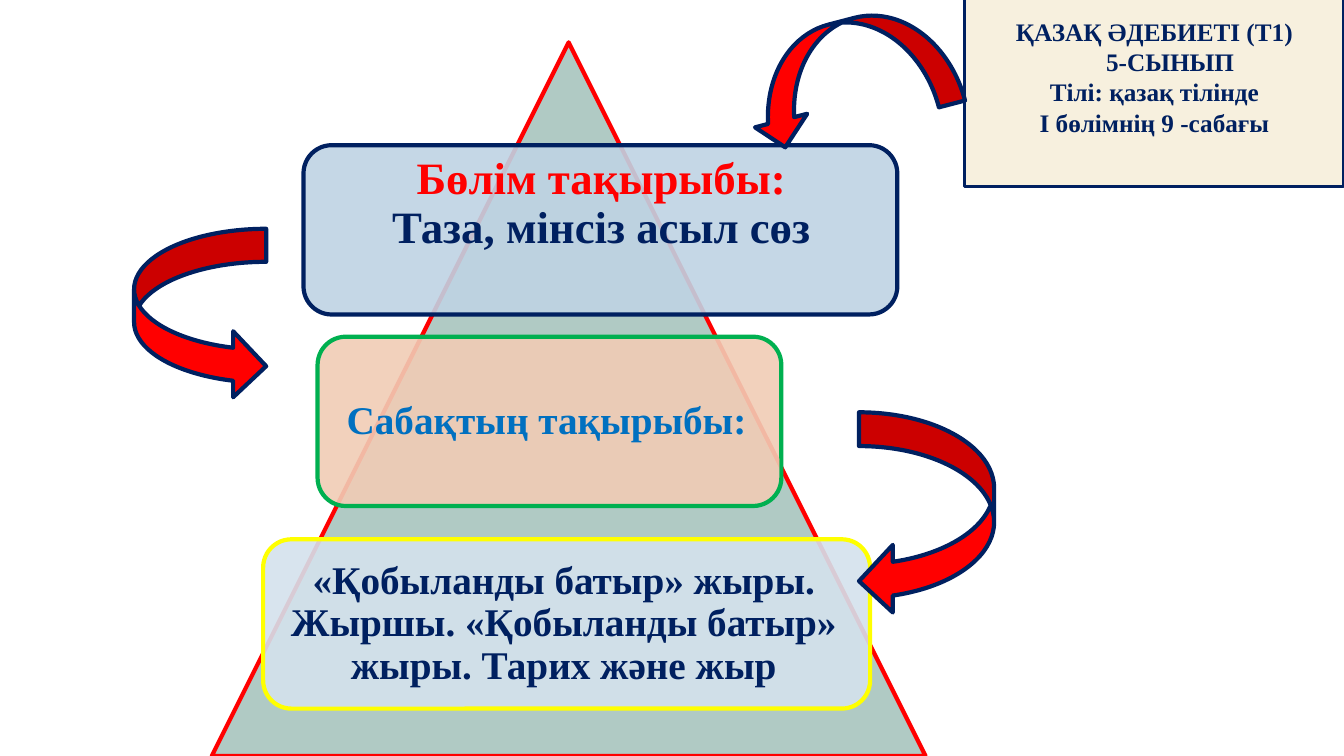
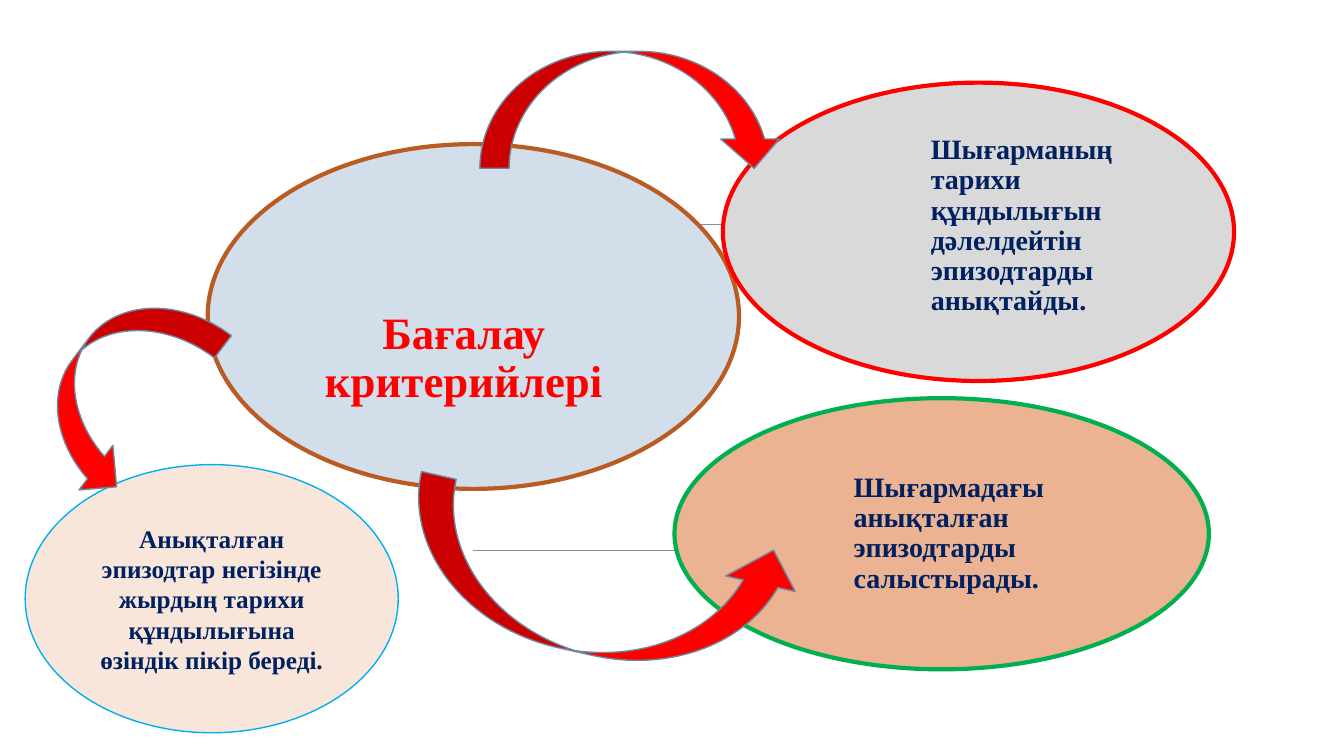
from lxml import etree
from pptx import Presentation
from pptx.dml.color import RGBColor
from pptx.enum import shapes, text
from pptx.oxml import ns
from pptx.util import Inches, Pt

NAVY = RGBColor(0x00, 0x20, 0x60)
RED = RGBColor(0xFF, 0x00, 0x00)
GREEN = RGBColor(0x00, 0xB0, 0x50)
BLUE = RGBColor(0x00, 0x70, 0xC0)
SKY = RGBColor(0x00, 0xB0, 0xF0)
YELLOW = RGBColor(0xFF, 0xFF, 0x00)
BROWN = RGBColor(0xB9, 0x5B, 0x22)
STEEL = RGBColor(0x6D, 0x87, 0x9B)
SLATE = RGBColor(0x77, 0x92, 0xA8)
CREAM = RGBColor(0xF7, 0xF0, 0xDE)
SAGE = RGBColor(0xB0, 0xCA, 0xC4)
PALE_BLUE = RGBColor(0xBF, 0xD3, 0xE4)
PEACH = RGBColor(0xF1, 0xCC, 0xB5)
ICE = RGBColor(0xD4, 0xE2, 0xED)
MIST = RGBColor(0xD2, 0xDE, 0xEA)
GREY = RGBColor(0xD9, 0xD9, 0xD9)
ORANGE = RGBColor(0xEB, 0xB3, 0x91)
BLUSH = RGBColor(0xF8, 0xE6, 0xDA)

FONT = "Times New Roman"
KIND = shapes.MSO_SHAPE
ANCHOR = text.MSO_ANCHOR
ALIGN = text.PP_ALIGN


def draw(page, kind, place, fill, line, weight, opacity=100):
    """Add a filled, outlined preset shape; place is left, top, width, height."""
    shape = page.shapes.add_shape(kind, *map(Inches, place))
    shape.shadow.inherit = False
    shape.fill.solid()
    shape.fill.fore_color.rgb = fill
    shape.line.color.rgb = line
    shape.line.width = Pt(weight)
    if opacity < 100:
        color = shape._element.spPr.find(ns.qn("a:solidFill"))[0]
        etree.SubElement(color, ns.qn("a:alpha"), val=str(opacity * 1000))
    return shape


def write(shape, lines, size, color, margins=(0.1, 0.05, 0.1, 0.05),
          anchor=ANCHOR.MIDDLE, align=ALIGN.CENTER, spacing=0.9):
    """Fill a shape with bold lines; margins are left, top, right, bottom."""
    frame = shape.text_frame
    frame.text = "\n".join(lines)
    frame.word_wrap = True
    frame.auto_size = text.MSO_AUTO_SIZE.NONE
    frame.vertical_anchor = anchor
    for side, margin in zip(("left", "top", "right", "bottom"), margins):
        setattr(frame, f"margin_{side}", Inches(margin))
    for para in frame.paragraphs:
        para.alignment = align
        para.line_spacing = spacing
        for span in para.runs:
            for name, value in {"name": FONT, "size": Pt(size), "bold": True}.items():
                setattr(span.font, name, value)
            span.font.color.rgb = color
    return frame


deck = Presentation()
deck.slide_width = Inches(13.33)
deck.slide_height = Inches(7.5)
title_only = deck.slide_layouts[5]

# Slide 1: lesson topic
page = deck.slides.add_slide(title_only)

# Subject card
card = draw(page, KIND.RECTANGLE, (9.57, -0.06, 3.76, 1.91), CREAM, NAVY, 2.25)
lines = ["ҚАЗАҚ ӘДЕБИЕТІ (Т1)", "5-СЫНЫП", "Тілі: қазақ тілінде", "І бөлімнің 9 -сабағы"]
frame = write(card, lines, 18, NAVY, margins=(0.1, 0.22, 0.1, 0.05),
              anchor=ANCHOR.TOP, spacing=1.0)
frame.paragraphs[1]._p.get_or_add_pPr().set("marL", str(Inches(0.31)))

# Pyramid with three bars
draw(page, KIND.ISOSCELES_TRIANGLE, (2.1, 0.42, 7.08, 7.08), SAGE, RED, 3)
bars = [
    (3.01, 1.44, 5.89, PALE_BLUE, NAVY, "", NAVY),
    (3.15, 3.34, 4.6, PEACH, GREEN, "Сабақтың тақырыбы:", BLUE),
    (2.61, 5.35, 6.02, ICE, YELLOW,
     "«Қобыланды батыр» жыры. Жыршы. «Қобыланды батыр» жыры. Тарих және жыр", NAVY),
]
for left, top, width, fill, line, words, color in bars:
    bar = draw(page, KIND.ROUNDED_RECTANGLE, (left, top, width, 1.68), fill, line, 3, 90)
    if words:
        write(bar, [words], 28, color, margins=(0.12, 0.12, 0.18, 0.12))

# Arrows between the steps
for kind, place, turn in [
    (KIND.CURVED_LEFT_ARROW, (8.52, 4.09, 1.34, 2.01), 0),
    (KIND.CURVED_RIGHT_ARROW, (1.33, 2.27, 1.31, 1.69), 0),
    (KIND.CURVED_UP_ARROW, (7.36, 0.21, 2.11, 1.07), 165.4),
]:
    draw(page, kind, place, RED, NAVY, 3).rotation = turn

# Slide 2: assessment criteria
criteria = deck.slides.add_slide(title_only)

# Rules behind the ovals
for y in (5.46, 2.23):
    rule = criteria.shapes.add_connector(
        shapes.MSO_CONNECTOR.STRAIGHT, Inches(4.69), Inches(y), Inches(9.32), Inches(y))
    rule.line.color.rgb = SLATE
    rule.line.width = Pt(1)
    etree.SubElement(rule._element.spPr, ns.qn("a:effectLst"))

# Ovals
draw(criteria, KIND.OVAL, (2.06, 1.43, 5.27, 3.42), MIST, BROWN, 3)
for place, fill, line, words, margins in [
    ((7.17, 0.82, 5.07, 2.96), GREY, RED,
     "Шығарманың тарихи құндылығын дәлелдейтін эпизодтарды анықтайды.",
     (1.32, 0, 0.29, 0.11)),
    ((6.69, 3.95, 5.3, 2.69), ORANGE, GREEN,
     "Шығармадағы анықталған эпизодтарды салыстырады.",
     (1, 0, 0.76, 0)),
]:
    oval = draw(criteria, KIND.OVAL, place, fill, line, 3)
    write(oval, [words], 20, NAVY, margins, align=ALIGN.LEFT)

# Arrows and the last oval, which sits between them
for kind, place, turn in [
    (KIND.CURVED_DOWN_ARROW, (4.76, 0.51, 3.01, 1.16), 0),
    (KIND.CURVED_UP_ARROW, (3.98, 5.09, 3.93, 1.41), 12.6),
]:
    draw(criteria, kind, place, RED, STEEL, 1).rotation = turn

opinion = draw(criteria, KIND.OVAL, (0.25, 4.61, 3.7, 2.66), BLUSH, SKY, 1)
write(opinion, ["Анықталған эпизодтар негізінде жырдың тарихи құндылығына өзіндік пікір береді."],
      18, NAVY, spacing=1.0)

arrow = draw(criteria, KIND.CURVED_DOWN_ARROW, (0.12, 3.3, 2.16, 1.11), RED, STEEL, 1)
arrow.rotation = 307.2
arrow._element.spPr.find(ns.qn("a:xfrm")).set("flipH", "1")

# Titles, brought in front of the shapes that hold them
for slide, place, lines, margins, anchor in [
    (page, (3.1, 1.52, 5.73, 1.51), ["Бөлім тақырыбы:", "Таза, мінсіз асыл сөз"],
     (0.13, 0.13, 0.13, 0.62), ANCHOR.MIDDLE),
    (criteria, (2.95, 2.34, 3.3, 1.7), ["Бағалау критерийлері"],
     (0, 0, 0, 0), ANCHOR.BOTTOM),
]:
    title = slide.shapes.title
    for name, value in zip(("left", "top", "width", "height"), place):
        setattr(title, name, Inches(value))
    frame = write(title, lines, 32, NAVY, margins, anchor)
    frame.paragraphs[0].runs[0].font.color.rgb = RED
    slide.shapes._spTree.append(title._element)

deck.save("out.pptx")
